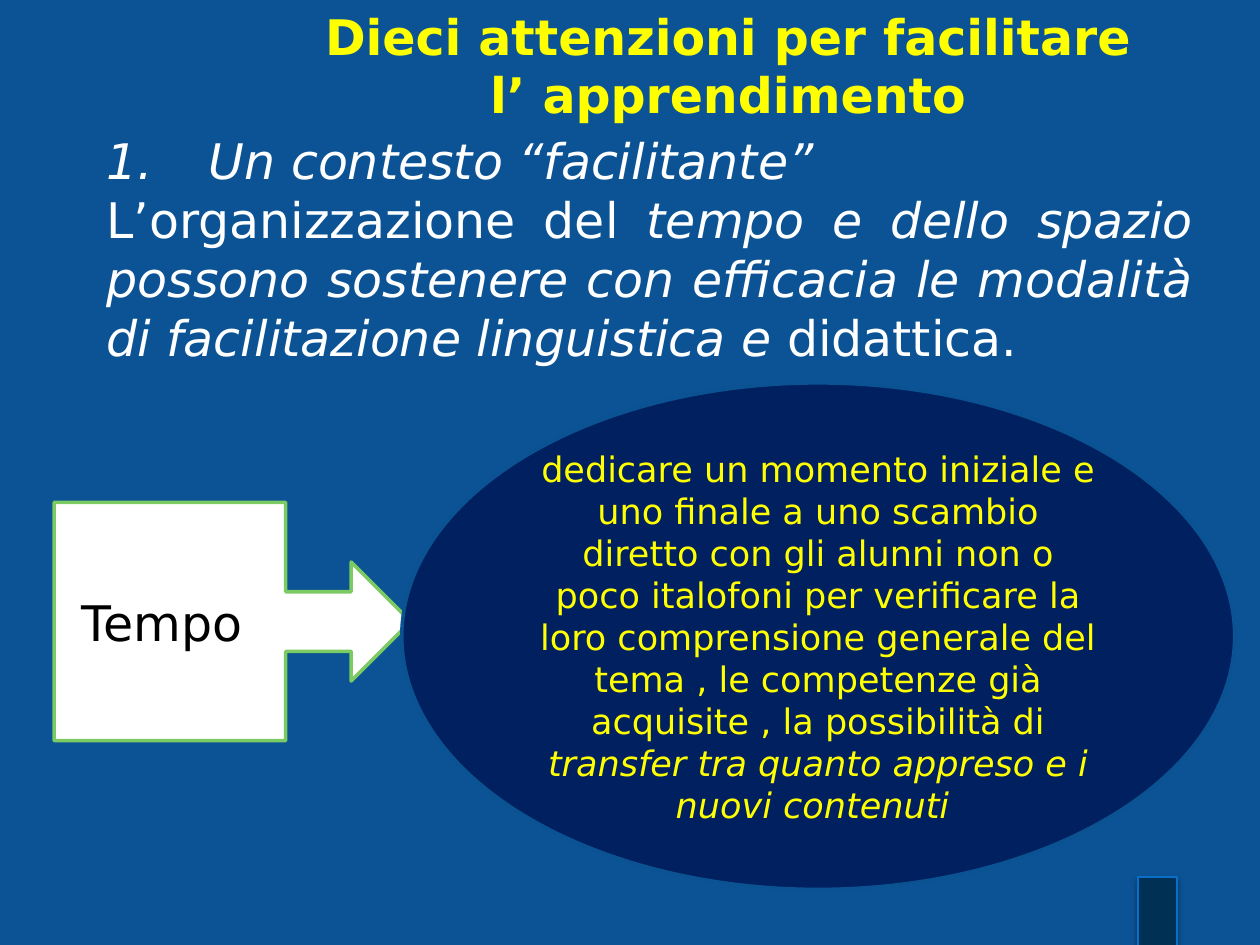
from dataclasses import dataclass

from lxml import etree
from pptx import Presentation
from pptx import util as u
from pptx.dml.color import RGBColor
from pptx.enum import shapes, text
from pptx.oxml.ns import qn


@dataclass(frozen=True)
class Theme:
    font: str = "DejaVu Sans"
    background: str = "0B5394"
    accent: str = "FFFF00"
    light: str = "FFFFFF"
    dark: str = "000000"
    callout_line: str = "7CCA62"
    oval_fill: str = "002060"
    oval_line: str = "0B5292"
    bar_fill: str = "003053"
    bar_line: str = "0A6DC6"
    large: int = 28
    small: int = 20


class SlideBuilder:
    def __init__(self, slide, theme):
        self.slide = slide
        self.theme = theme
        slide.background.fill.solid()
        slide.background.fill.fore_color.rgb = RGBColor.from_string(theme.background)

    def fill_text(self, frame, paragraphs, size, color, align, bold=False):
        frame.word_wrap = True
        for index, pieces in enumerate(paragraphs):
            paragraph = frame.paragraphs[0] if index == 0 else frame.add_paragraph()
            paragraph.alignment = align
            paragraph.text = pieces[0][0]
            for words, _ in pieces[1:]:
                paragraph.add_run().text = words
            for run, (_, italic) in zip(paragraph.runs, pieces):
                run.font.name = self.theme.font
                run.font.size = u.Pt(size)
                run.font.bold = bold
                run.font.italic = italic
                run.font.color.rgb = RGBColor.from_string(color)

    def text_box(self, box, paragraphs, size, color, align, bold=False):
        frame = self.slide.shapes.add_textbox(*map(u.Cm, box)).text_frame
        self.fill_text(frame, paragraphs, size, color, align, bold)
        frame.auto_size = text.MSO_AUTO_SIZE.SHAPE_TO_FIT_TEXT
        return frame

    def number(self, paragraph, indent):
        properties = paragraph._p.get_or_add_pPr()
        properties.set("marL", str(u.Cm(indent)))
        properties.set("indent", str(-u.Cm(indent)))
        etree.SubElement(properties, qn("a:buFont"), typeface="+mj-lt")
        etree.SubElement(properties, qn("a:buAutoNum"), type="arabicPeriod")

    def panel(self, kind, box, fill, line, width=2):
        panel = self.slide.shapes.add_shape(kind, *map(u.Cm, box))
        panel.shadow.inherit = False
        panel.fill.solid()
        panel.fill.fore_color.rgb = RGBColor.from_string(fill)
        panel.line.color.rgb = RGBColor.from_string(line)
        panel.line.width = u.Pt(width)
        panel.text_frame.vertical_anchor = text.MSO_ANCHOR.MIDDLE
        return panel

    def cast_shadow(self, panel, blur, distance, opacity):
        effects = panel._element.spPr.find(qn("a:effectLst"))
        shadow = etree.SubElement(
            effects, qn("a:outerShdw"), blurRad=str(u.Pt(blur)),
            dist=str(u.Pt(distance)), dir="5400000", rotWithShape="0")
        color = etree.SubElement(shadow, qn("a:srgbClr"), val=self.theme.dark)
        etree.SubElement(color, qn("a:alpha"), val=str(opacity * 1000))


def main():
    theme = Theme()
    deck = Presentation()
    deck.slide_width, deck.slide_height = u.Cm(25.4), u.Cm(19.05)
    builder = SlideBuilder(deck.slides.add_slide(deck.slide_layouts[6]), theme)
    center, justify = text.PP_ALIGN.CENTER, text.PP_ALIGN.JUSTIFY

    footer_bar = builder.panel(shapes.MSO_SHAPE.RECTANGLE, (22.94, 17.68, 0.79, 1.4),
                               theme.bar_fill, theme.bar_line, 0.75)
    builder.cast_shadow(footer_bar, 3.1, 1.8, 35)

    builder.text_box(
        (4.29, 0, 21.11, 2.64),
        [[("Dieci attenzioni per facilitare ", False)], [("l’ apprendimento ", False)]],
        theme.large, theme.accent, center, bold=True)

    context = builder.text_box(
        (1.9, 2.51, 22.4, 5.05),
        [[("Un contesto “facilitante” ", True)],
         [("L’organizzazione del ", False),
          ("tempo e dello spazio possono sostenere con efficacia le modalità "
           "di facilitazione linguistica e ", True),
          ("didattica.", False)]],
        theme.large, theme.light, justify)
    builder.number(context.paragraphs[0], 2.06)

    time_callout = builder.panel(shapes.MSO_SHAPE.RIGHT_ARROW_CALLOUT,
                                 (1.09, 10.13, 7.19, 4.8), theme.light, theme.callout_line)
    builder.fill_text(time_callout.text_frame, [[("Tempo ", False)]],
                      theme.large, theme.dark, center)

    advice = builder.panel(shapes.MSO_SHAPE.OVAL, (8.1, 7.72, 16.79, 10.21),
                           theme.oval_fill, theme.oval_line)
    builder.fill_text(
        advice.text_frame,
        [[("dedicare un momento iniziale e uno finale a uno scambio diretto con gli "
           "alunni non o poco italofoni per verificare la loro comprensione generale "
           "del tema , le competenze già acquisite , la possibilità di ", False),
          ("transfer tra quanto appreso e i nuovi contenuti ", True)]],
        theme.small, theme.accent, center)

    deck.save("out.pptx")


if __name__ == "__main__":
    main()
